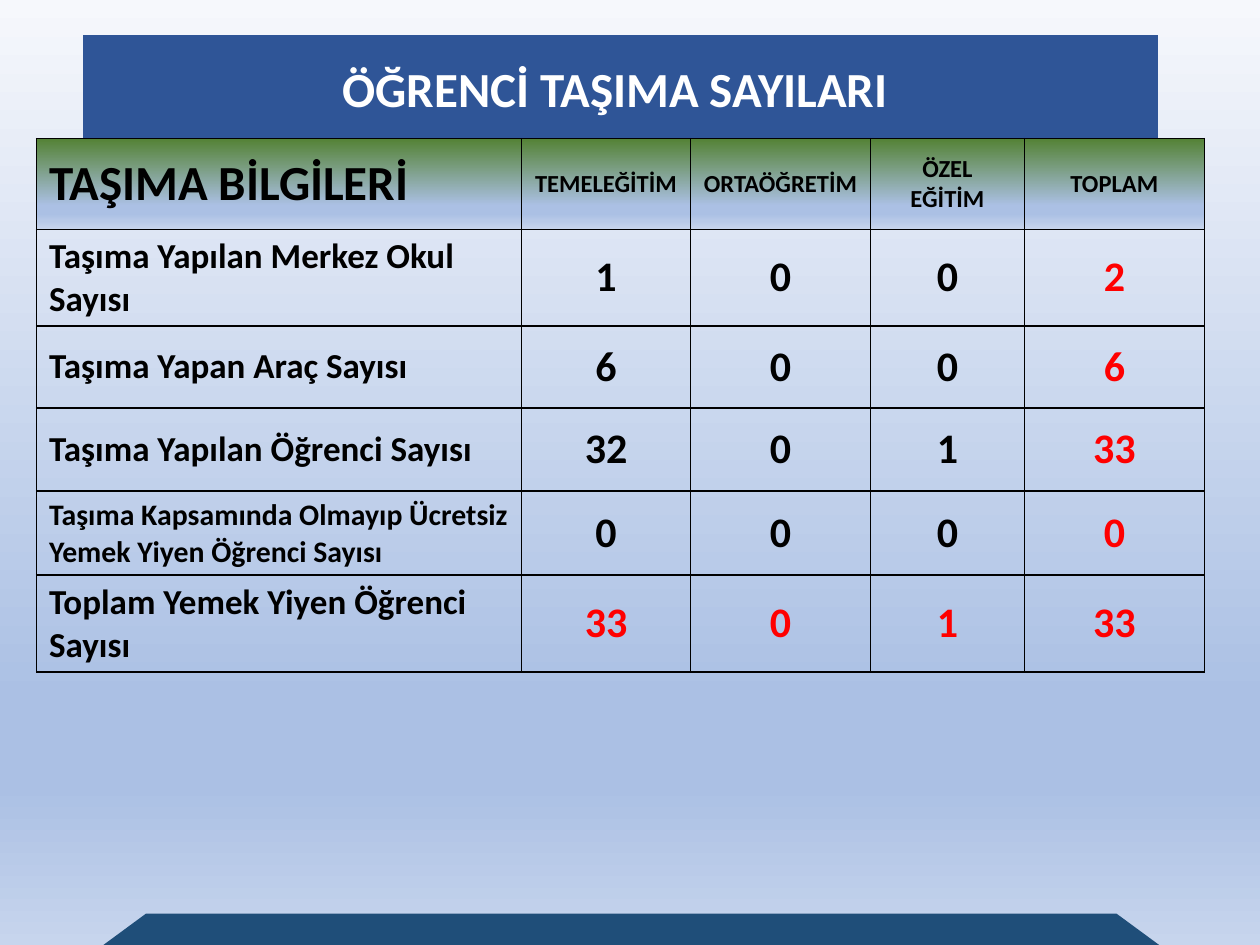
from lxml.etree import SubElement
from pptx import Presentation
from pptx.dml.color import RGBColor
from pptx.enum.shapes import MSO_SHAPE as Shape
from pptx.enum.text import MSO_ANCHOR as Anchor, MSO_AUTO_SIZE as AutoSize, PP_ALIGN as Align
from pptx.oxml.ns import qn
from pptx.util import Inches, Pt

FONT = "Calibri"
BLACK, RED, WHITE = "000000", "FF0000", "FFFFFF"
BLUE_STOPS = [(74, "ABC0E4"), (83, "ABC0E4"), (100, "C7D5ED")]
PAGE_STOPS = [(0, "F6F8FC")] + BLUE_STOPS
HEADER_STOPS = [(0, "548235")] + BLUE_STOPS

COLUMN_WIDTHS = [3.85, 1.34, 1.43, 1.22, 1.43]
ROW_HEIGHTS = [0.72, 0.53, 0.65, 0.66, 0.62, 0.62]
ROWS = [
    ["TAŞIMA BİLGİLERİ", "TEMELEĞİTİM", "ORTAÖĞRETİM", "ÖZEL EĞİTİM", "TOPLAM"],
    ["Taşıma Yapılan Merkez Okul Sayısı", "1", "0", "0", "2"],
    ["Taşıma Yapan Araç Sayısı", "6", "0", "0", "6"],
    ["Taşıma Yapılan Öğrenci Sayısı", "32", "0", "1", "33"],
    ["Taşıma Kapsamında Olmayıp Ücretsiz Yemek Yiyen Öğrenci Sayısı", "0", "0", "0", "0"],
    ["Toplam Yemek Yiyen Öğrenci Sayısı", "33", "0", "1", "33"],
]
LABEL_SIZES = [28, 20, 20, 20, 17, 20]


def color(value):
    return RGBColor.from_string(value)


def fill_gradient(fill, owner, stops):
    """Fill from top to bottom; owner is the XML element that holds the fill."""
    fill.gradient()
    fill.gradient_angle = 270
    stop_list = next(owner.iter(qn("a:gsLst")))
    stop_list.clear()
    for percent, value in stops:
        stop = SubElement(stop_list, qn("a:gs"), pos=str(percent * 1000))
        SubElement(stop, qn("a:srgbClr"), val=value)


def format_text(frame, size, value, align):
    para = frame.paragraphs[0]
    para.alignment = align
    para.font.name = FONT
    para.font.size = Pt(size)
    para.font.bold = True
    para.font.color.rgb = color(value)


def add_title(slide):
    title = slide.shapes.title
    title.left, title.top = Inches(0.66), Inches(0.41)
    title.width, title.height = Inches(8.53), Inches(0.57)
    title.fill.solid()
    title.fill.fore_color.rgb = color("2F5597")
    frame = title.text_frame
    frame.text = "ÖĞRENCİ TAŞIMA SAYILARI "
    frame.word_wrap = True
    frame.auto_size = AutoSize.SHAPE_TO_FIT_TEXT
    frame.vertical_anchor = Anchor.MIDDLE
    format_text(frame, 28, WHITE, Align.CENTER)


def add_footer_band(slide):
    band = slide.shapes.add_shape(
        Shape.TRAPEZOID, Inches(0.82), Inches(7.25), Inches(8.38), Inches(0.25))
    band.adjustments[0] = 1.36
    band.shadow.inherit = False
    band.fill.solid()
    band.fill.fore_color.rgb = color("1F4E79")
    band.line.fill.background()


def add_borders(cell):
    properties = cell._tc.get_or_add_tcPr()
    for side in ("lnL", "lnR", "lnT", "lnB"):
        line = SubElement(properties, qn(f"a:{side}"), w=str(Pt(1)))
        SubElement(SubElement(line, qn("a:solidFill")), qn("a:srgbClr"), val=BLACK)


def format_cell(cell, row, column):
    is_header, is_label = row == 0, column == 0
    is_total = not is_header and not is_label and (
        row == len(ROWS) - 1 or column == len(COLUMN_WIDTHS) - 1)
    size = LABEL_SIZES[row] if is_label else 14 if is_header else 24
    cell.text = ROWS[row][column]
    cell.vertical_anchor = Anchor.MIDDLE
    format_text(cell.text_frame, size, RED if is_total else BLACK,
                Align.LEFT if is_label else Align.CENTER)
    add_borders(cell)
    if is_header:
        fill_gradient(cell.fill, cell._tc, HEADER_STOPS)
    else:
        cell.fill.background()


def add_transport_table(slide):
    frame = slide.shapes.add_table(
        len(ROWS), len(COLUMN_WIDTHS), Inches(0.29), Inches(1.1), Inches(9.26), Inches(4.24))
    table = frame.table
    table.first_row = table.horz_banding = False
    for column, width in zip(table.columns, COLUMN_WIDTHS):
        column.width = Inches(width)
    for row, height in zip(table.rows, ROW_HEIGHTS):
        row.height = Inches(height)
    frame.height = Inches(4.24)
    for row in range(len(ROWS)):
        for column in range(len(COLUMN_WIDTHS)):
            format_cell(table.cell(row, column), row, column)


def main():
    deck = Presentation()
    deck.slide_width, deck.slide_height = Inches(10), Inches(7.5)
    slide = deck.slides.add_slide(deck.slide_layouts[5])
    fill_gradient(slide.background.fill, slide.element, PAGE_STOPS)
    add_footer_band(slide)
    add_title(slide)
    add_transport_table(slide)
    deck.save("out.pptx")


if __name__ == "__main__":
    main()
